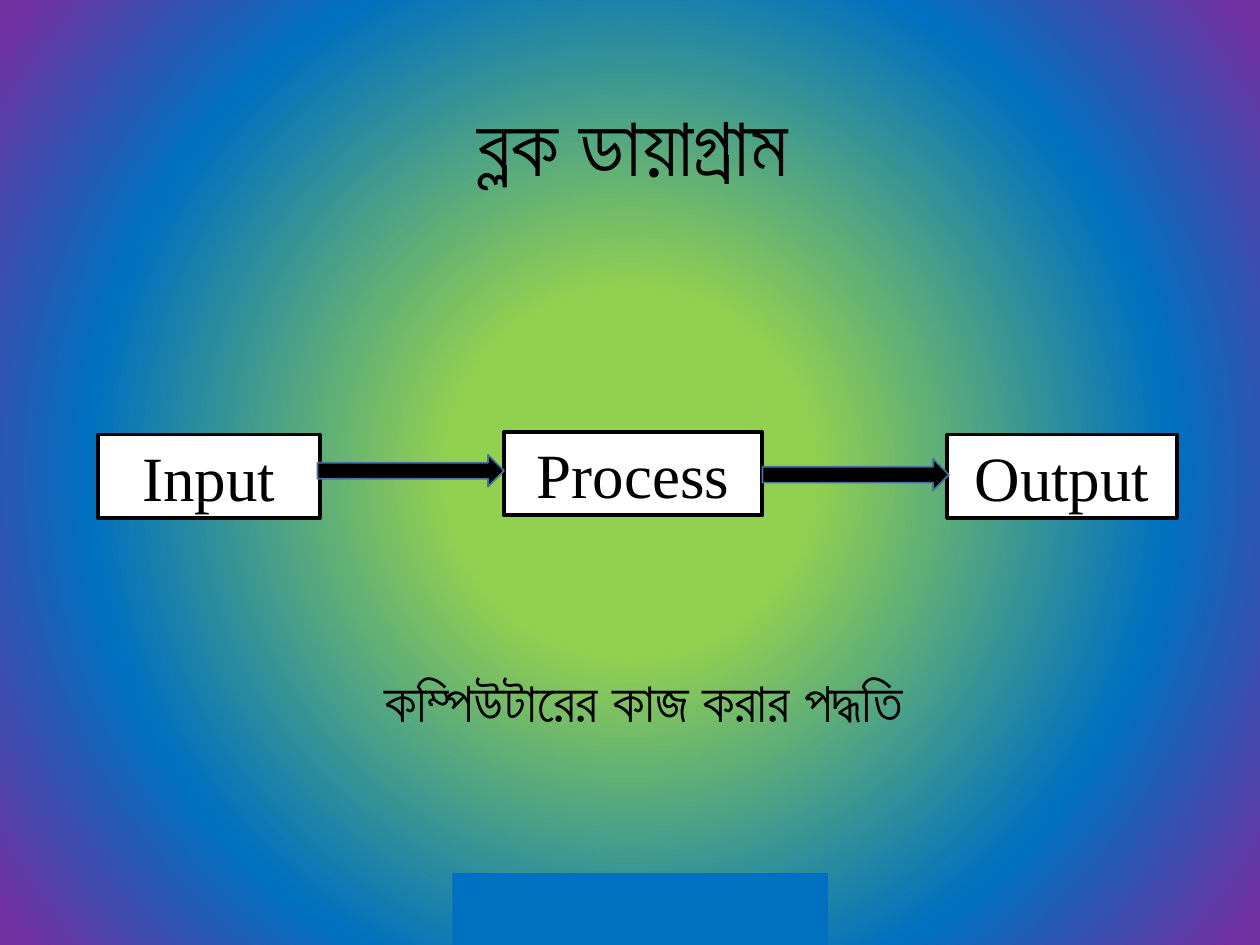
from typing import NamedTuple, Optional

from lxml.etree import SubElement
from pptx import Presentation
from pptx.dml.color import RGBColor
from pptx.enum.shapes import MSO_SHAPE
from pptx.enum.text import MSO_ANCHOR, MSO_AUTO_SIZE, PP_ALIGN
from pptx.oxml.ns import qn
from pptx.slide import Slide
from pptx.text.text import TextFrame
from pptx.util import Cm, Pt

BLACK = RGBColor(0x00, 0x00, 0x00)
WHITE = RGBColor(0xFF, 0xFF, 0xFF)
GREEN = RGBColor(0x92, 0xD0, 0x50)
BLUE = RGBColor(0x00, 0x70, 0xC0)
PURPLE = RGBColor(0x70, 0x30, 0xA0)
ARROW_EDGE = RGBColor(0x43, 0x73, 0x9E)

BACKDROP_STOPS = [(0, GREEN), (23, GREEN), (69, BLUE), (97, PURPLE)]


class Area(NamedTuple):
    left: float
    top: float
    width: float
    height: float

    def lengths(self) -> tuple[Cm, ...]:
        return tuple(Cm(value) for value in self)


class Caption(NamedTuple):
    wording: str
    area: Area
    size: int


class Block(NamedTuple):
    kind: MSO_SHAPE
    area: Area
    fill: RGBColor
    edge: Optional[RGBColor] = None
    edge_width: float = 0
    label: str = ""


def stage(label: str, left: float, top: float, width: float) -> Block:
    area = Area(left, top, width, 1.68)
    return Block(MSO_SHAPE.RECTANGLE, area, WHITE, BLACK, 2.25, label)


def flow(left: float, top: float) -> Block:
    area = Area(left, top, 3.76, 0.64)
    return Block(MSO_SHAPE.RIGHT_ARROW, area, BLACK, ARROW_EDGE, 1)


CAPTIONS = [
    Caption("ব্লক ডায়াগ্রাম", Area(8.41, 1.75, 8.69, 2.31), 48),
    Caption("কম্পিউটারের কাজ করার পদ্ধতি", Area(6.3, 13.31, 13.34, 1.63), 32),
]
BLOCKS = [
    stage("Input", 1.98, 8.76, 4.47),
    stage("Output", 19.1, 8.76, 4.62),
    stage("Process", 10.16, 8.71, 5.21),
    flow(6.4, 9.17),
    flow(15.37, 9.25),
    Block(MSO_SHAPE.RECTANGLE, Area(9.12, 17.6, 7.57, 1.45), BLUE),
]


def paint_backdrop(slide: Slide) -> None:
    slide.background.fill.gradient()
    gradient = next(slide.element.iter(qn("a:gradFill")))
    for part in list(gradient):
        gradient.remove(part)
    stops = SubElement(gradient, qn("a:gsLst"))
    for percent, color in BACKDROP_STOPS:
        stop = SubElement(stops, qn("a:gs"), pos=str(percent * 1000))
        SubElement(stop, qn("a:srgbClr"), val=str(color))
    circle = SubElement(gradient, qn("a:path"), path="circle")
    center = {side: "50000" for side in "ltrb"}
    SubElement(circle, qn("a:fillToRect"), center)


def write(frame: TextFrame, wording: str, font_name: str, size: int) -> None:
    frame.word_wrap = True
    paragraph = frame.paragraphs[0]
    paragraph.text = wording
    paragraph.alignment = PP_ALIGN.CENTER
    paragraph.font.name = font_name
    paragraph.font.size = Pt(size)
    paragraph.font.color.rgb = BLACK


def draw_caption(slide: Slide, caption: Caption) -> None:
    frame = slide.shapes.add_textbox(*caption.area.lengths()).text_frame
    write(frame, caption.wording, "Lato", caption.size)
    frame.auto_size = MSO_AUTO_SIZE.SHAPE_TO_FIT_TEXT


def draw_block(slide: Slide, block: Block) -> None:
    shape = slide.shapes.add_shape(block.kind, *block.area.lengths())
    shape.shadow.inherit = False
    shape.fill.solid()
    shape.fill.fore_color.rgb = block.fill
    if block.edge is None:
        shape.line.fill.background()
    else:
        shape.line.color.rgb = block.edge
        shape.line.width = Pt(block.edge_width)
    if block.label:
        shape.text_frame.vertical_anchor = MSO_ANCHOR.MIDDLE
        write(shape.text_frame, block.label, "Times New Roman", 36)


def main() -> None:
    deck = Presentation()
    deck.slide_width = Cm(25.4)
    deck.slide_height = Cm(19.05)
    slide = deck.slides.add_slide(deck.slide_layouts[6])
    paint_backdrop(slide)
    title, method = CAPTIONS
    draw_caption(slide, title)
    *diagram, footer = BLOCKS
    for block in diagram:
        draw_block(slide, block)
    draw_caption(slide, method)
    draw_block(slide, footer)
    deck.save("out.pptx")


if __name__ == "__main__":
    main()
